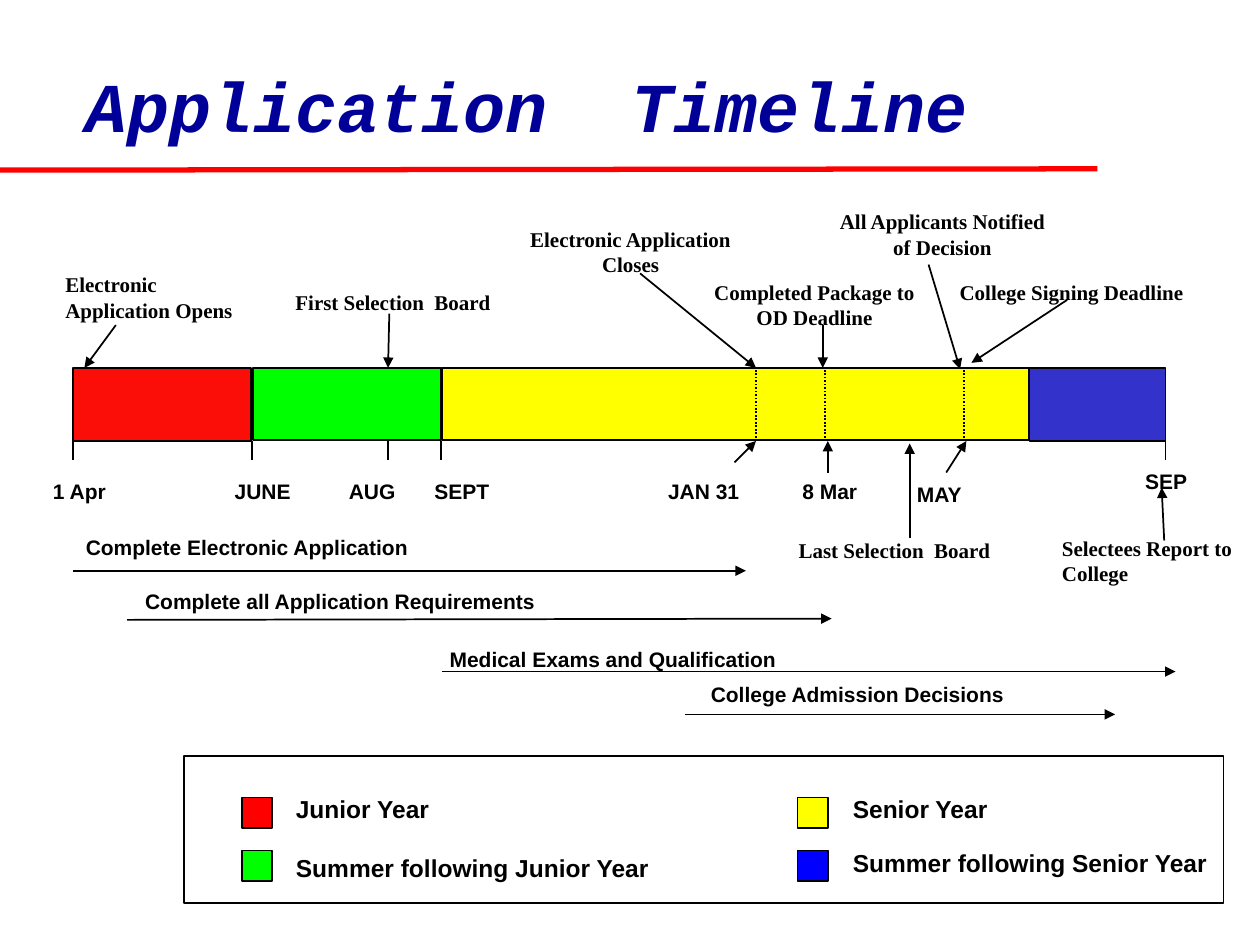
import pptx
import pptx.util
import pptx.dml.color
import pptx.enum.dml
import pptx.enum.shapes
import pptx.enum.text
import pptx.oxml.ns
from lxml import etree

Inches = pptx.util.Inches
Pt = pptx.util.Pt
Align = pptx.enum.text.PP_ALIGN
AutoSize = pptx.enum.text.MSO_AUTO_SIZE

COLORS = {
    "black": "000000",
    "title": "000099",
    "rule": "FF0000",
    "junior bar": "FA0E07",
    "junior": "FF0000",
    "junior summer": "00FF00",
    "senior": "FFFF00",
    "senior summer bar": "3333CC",
    "senior summer": "0000FF",
}
SANS, SERIF = "Arial", "Times New Roman"
BAR_TOP, BAR_BOTTOM = 2.92, 3.5
MONTH_TOP = 3.75


def rgb(name):
    return pptx.dml.color.RGBColor.from_string(COLORS[name])


def add_box(slide, left, top, width, height, fill=None):
    shape = slide.shapes.add_shape(
        pptx.enum.shapes.MSO_SHAPE.RECTANGLE,
        Inches(left), Inches(top), Inches(width), Inches(height))
    shape.shadow.inherit = False
    if fill:
        shape.fill.solid()
        shape.fill.fore_color.rgb = rgb(fill)
    else:
        shape.fill.background()
    shape.line.color.rgb = rgb("black")
    shape.line.width = Pt(1)


def add_line(slide, start, end, arrow=False, dotted=False, color="black", width=1):
    line = slide.shapes.add_connector(
        pptx.enum.shapes.MSO_CONNECTOR.STRAIGHT,
        *(Inches(value) for value in (*start, *end)))
    line.line.color.rgb = rgb(color)
    line.line.width = Pt(width)
    if dotted:
        line.line.dash_style = pptx.enum.dml.MSO_LINE.ROUND_DOT
    if arrow:
        etree.SubElement(line.line._get_or_add_ln(),
                         pptx.oxml.ns.qn("a:tailEnd"), type="triangle")
    etree.SubElement(line._element.spPr, pptx.oxml.ns.qn("a:effectLst"))


def add_text(slide, lines, left, top, width, height=0.3, font=SANS, size=12,
             align=Align.CENTER, wrap=True, spacing=None, gap=0):
    """Add bold text, one paragraph per line, with gap points between them."""
    box = slide.shapes.add_textbox(
        Inches(left), Inches(top), Inches(width), Inches(height))
    frame = box.text_frame
    frame.word_wrap = wrap
    frame.auto_size = AutoSize.SHAPE_TO_FIT_TEXT
    frame.text = "\n".join(lines)
    for index, paragraph in enumerate(frame.paragraphs):
        paragraph.alignment = align
        if spacing:
            paragraph.line_spacing = spacing
        if index:
            paragraph.space_before = Pt(gap)
        paragraph.font.name = font
        paragraph.font.size = Pt(size)
        paragraph.font.bold = True
        paragraph.font.color.rgb = rgb("black")


def add_title(slide, text):
    title = slide.shapes.title
    title.left, title.top = Inches(0.58), Inches(0.5)
    title.width, title.height = Inches(8.25), Inches(0.75)
    frame = title.text_frame
    frame.text = text
    frame.auto_size = AutoSize.NONE
    frame.vertical_anchor = pptx.enum.text.MSO_ANCHOR.MIDDLE
    paragraph = frame.paragraphs[0]
    paragraph.alignment = Align.LEFT
    paragraph.line_spacing = 0.9
    paragraph.font.name = "Courier New"
    paragraph.font.size = Pt(40)
    paragraph.font.bold = paragraph.font.italic = True
    paragraph.font.color.rgb = rgb("title")


def add_year_bar(slide):
    for left, right, height, fill in (
            (0.58, 1.99, 0.58, "junior bar"),
            (2.01, 3.5, 0.57, "junior summer"),
            (3.51, 8.17, 0.57, "senior"),
            (8.17, 9.25, 0.58, "senior summer bar")):
        add_box(slide, left, BAR_TOP, right - left, height, fill)
    for x in (0.58, 2, 3.08, 3.5, 9.25):
        add_line(slide, (x, BAR_BOTTOM), (x, BAR_BOTTOM + 0.15))
    for x in (6, 6.55, 7.65):
        add_line(slide, (x, BAR_BOTTOM), (x, BAR_TOP), dotted=True)


def add_months(slide):
    for text, left, top, width in (
            ("1 Apr", 0.17, MONTH_TOP, 0.92),
            ("JUNE", 1.75, MONTH_TOP, 0.67),
            ("SEPT", 3.33, MONTH_TOP, 0.67),
            ("JAN 31", 5.17, MONTH_TOP, 0.83),
            ("MAY", 7.04, 3.77, 0.83),
            ("SEP", 8.92, 3.67, 0.67)):
        add_text(slide, [text], left, top, width)
    add_text(slide, ["AUG"], 2.67, MONTH_TOP, 0.83, align=Align.LEFT)
    add_text(slide, ["8 Mar"], 6.27, MONTH_TOP, 0.64, align=Align.LEFT, wrap=False)
    for start, end in (((5.83, 3.67), (6, BAR_BOTTOM)),
                       ((6.57, 3.75), (6.57, BAR_BOTTOM)),
                       ((7.51, 3.75), (7.67, BAR_BOTTOM))):
        add_line(slide, start, end, arrow=True)


def add_milestones(slide):
    for text, left, top, width, height, start, end in (
            ("First Selection  Board", 2.12, 2.25, 2, 0.3,
             (3.09, 2.49), (3.08, BAR_TOP)),
            ("Electronic Application Closes", 4.04, 1.75, 1.93, 0.5,
             (5.08, 2.17), (6, BAR_TOP)),
            ("Completed Package to OD Deadline", 5.5, 2.17, 1.93, 0.5,
             (6.53, 2.58), (6.53, BAR_TOP)),
            ("College Signing Deadline", 7.25, 2.17, 2.51, 0.3,
             (8.47, 2.38), (7.71, 2.88)),
            ("Last Selection  Board", 6.1, 4.22, 2, 0.3,
             (7.22, 4.27), (7.22, 3.52))):
        add_text(slide, [text], left, top, width, height, font=SERIF)
        add_line(slide, start, end, arrow=True)
    add_text(slide, ["Electronic", "Application Opens"], 0.42, 2.11, 1.53, 0.5,
             font=SERIF, align=Align.LEFT, wrap=False)
    add_line(slide, (0.92, 2.58), (0.67, BAR_TOP), arrow=True)
    add_text(slide, ["All Applicants Notified", "of Decision"], 6.54, 1.61, 1.88, 0.5,
             font=SERIF, wrap=False)
    add_line(slide, (7.37, 2.1), (7.62, 2.93), arrow=True)
    add_text(slide, ["Selectees Report to College"], 8.33, 4.2, 1.67, 0.5,
             font=SERIF, align=Align.LEFT)
    add_line(slide, (9.24, 4.29), (9.22, 3.87), arrow=True)


def add_phases(slide):
    for text, left, top, width, start, end in (
            ("Complete Electronic Application", -0.25, 4.19, 4.42,
             (0.58, 4.53), (5.92, 4.53)),
            ("Complete all Application Requirements", 0.57, 4.62, 4.26,
             (1.01, 4.92), (6.6, 4.91)),
            ("Medical Exams and Qualification", 2.57, 5.08, 4.59,
             (3.51, 5.33), (9.33, 5.33)),
            ("College Admission Decisions", 4.51, 5.36, 4.59,
             (5.44, 5.67), (8.85, 5.67))):
        add_text(slide, [text], left, top, width)
        add_line(slide, start, end, arrow=True)


def add_legend(slide):
    add_box(slide, 1.46, 6, 8.25, 1.17)
    for left, fills in ((1.92, ("junior", "junior summer")),
                        (6.33, ("senior", "senior summer"))):
        for row, fill in enumerate(fills):
            add_box(slide, left, 6.33 + 0.42 * row, 0.24, 0.24, fill)
    add_text(slide, ["Junior Year", "Summer following Junior Year"],
             2.25, 6.25, 3.83, 0.8, size=14, align=Align.LEFT, gap=17)
    add_text(slide, ["Senior Year", "Summer following Senior Year"],
             6.67, 6.17, 3.17, 0.85, size=14, align=Align.LEFT, spacing=1.35, gap=8)


def main():
    presentation = pptx.Presentation()
    presentation.slide_width = Inches(10)
    presentation.slide_height = Inches(7.5)
    slide = presentation.slides.add_slide(presentation.slide_layouts[5])
    add_title(slide, "Application  Timeline")
    add_line(slide, (0, 1.35), (8.71, 1.34), color="rule", width=3)
    add_year_bar(slide)
    add_months(slide)
    add_milestones(slide)
    add_phases(slide)
    add_legend(slide)
    presentation.save("out.pptx")


if __name__ == "__main__":
    main()
